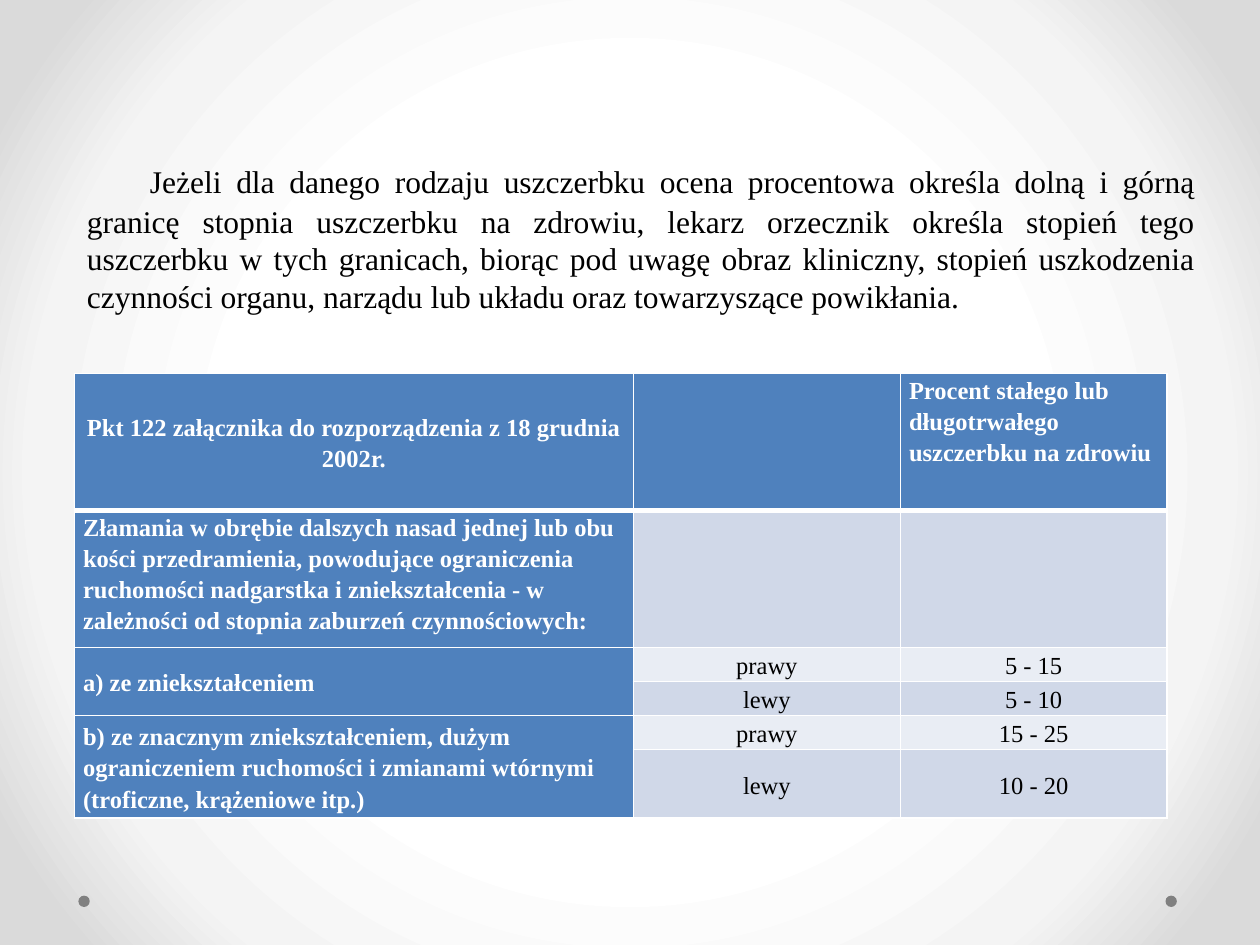
from pptx import Presentation
from pptx.dml.color import RGBColor
from pptx.enum.shapes import MSO_SHAPE as SHAPE
from pptx.enum.text import MSO_ANCHOR as ANCHOR, PP_ALIGN as ALIGN
from pptx.oxml import parse_xml
from pptx.oxml.ns import nsdecls
from pptx.util import Pt

FONT = "Times New Roman"
BLUE, BAND, PALE = "4F81BD", "D0D8E8", "E9EDF4"
WHITE, BLACK, GREY = "FFFFFF", "000000", "808080"

INTRO = (
    "Jeżeli dla danego rodzaju uszczerbku ocena procentowa określa dolną i górną "
    "granicę stopnia uszczerbku na zdrowiu, lekarz orzecznik określa stopień tego "
    "uszczerbku w tych granicach, biorąc pod uwagę obraz kliniczny, stopień "
    "uszkodzenia czynności organu, narządu lub układu oraz towarzyszące powikłania."
)
ROWS = [
    ("Pkt 122 załącznika do rozporządzenia z 18 grudnia 2002r.", "",
     "Procent stałego lub długotrwałego uszczerbku na zdrowiu"),
    ("Złamania w obrębie dalszych nasad jednej lub obu kości przedramienia, "
     "powodujące ograniczenia ruchomości nadgarstka i zniekształcenia - w "
     "zależności od stopnia zaburzeń czynnościowych:", "", ""),
    ("a) ze zniekształceniem", "prawy", "5 - 15"),
    ("", "lewy", "5 - 10"),
    ("b) ze znacznym zniekształceniem, dużym ograniczeniem ruchomości i zmianami "
     "wtórnymi (troficzne, krążeniowe itp.)", "prawy", "15 - 25"),
    ("", "lewy", "10 - 20"),
]
COL_WIDTHS = [319.5, 152.5, 152.5]
ROW_HEIGHTS = [78.3, 78.3, 19.5, 19.5, 19.5, 38.9]


def rgb(code):
    return RGBColor.from_string(code)


def style_font(font, size, color, bold=False):
    font.name, font.size, font.bold = FONT, Pt(size), bold
    font.color.rgb = rgb(color)


def set_background(s):
    s.background.fill.gradient()
    old = s.background._cSld.find(".//{*}gradFill")
    stops = "".join(
        f'<a:gs pos="{pos}000"><a:srgbClr val="{color}"/></a:gs>'
        for pos, color in [(50, WHITE), (76, "F4F4F4"), (92, "DADADA")]
    )
    new = parse_xml(
        f'<a:gradFill {nsdecls("a")} rotWithShape="1"><a:gsLst>{stops}</a:gsLst>'
        '<a:path path="circle"><a:fillToRect l="50000" t="50000" r="50000" '
        'b="50000"/></a:path></a:gradFill>'
    )
    old.getparent().replace(old, new)


def add_dot(s, x, y, size=6.5):
    sp = s.shapes.add_shape(SHAPE.OVAL, Pt(x), Pt(y), Pt(size), Pt(size))
    sp.shadow.inherit = False
    sp.fill.solid()
    sp.fill.fore_color.rgb = rgb(GREY)
    sp.line.fill.background()


def fill_body(sp):
    sp.left, sp.top, sp.width, sp.height = Pt(42.5), Pt(82.8), Pt(648), Pt(405)
    p = sp.text_frame.paragraphs[0]
    p.text = "\t"
    p.add_run().text = INTRO
    p.alignment, p.space_before = ALIGN.JUSTIFY, Pt(4.8)
    for r, size in zip(p.runs, (24, 18)):
        style_font(r.font, size, BLACK)
    pPr = p._p.get_or_add_pPr()
    pPr.set("marL", "0")
    pPr.set("indent", "0")
    pPr.append(parse_xml(f'<a:buNone {nsdecls("a")}/>'))


def set_borders(cell, row):
    widths = {"L": 1, "R": 1, "T": 3 if row == 1 else 1, "B": 3 if row == 0 else 1}
    tcPr = cell._tc.get_or_add_tcPr()
    for i, (side, width) in enumerate(widths.items()):
        tcPr.insert(i, parse_xml(
            f'<a:ln{side} {nsdecls("a")} w="{Pt(width)}"><a:solidFill>'
            f'<a:srgbClr val="{WHITE}"/></a:solidFill></a:ln{side}>'
        ))


def format_cell(cell, text, row, col):
    strong = row == 0 or col == 0
    cell.fill.solid()
    cell.fill.fore_color.rgb = rgb(BLUE if strong else BAND if row % 2 else PALE)
    set_borders(cell, row)
    if not text:
        return
    cell.margin_left = cell.margin_right = Pt(5)
    cell.margin_top = cell.margin_bottom = 0
    middle = row > 1 or (row, col) == (0, 0)
    cell.vertical_anchor = ANCHOR.MIDDLE if middle else ANCHOR.TOP
    p = cell.text_frame.paragraphs[0]
    p.text = text
    p.line_spacing = 1.15
    centred = not strong or (row, col) == (0, 0)
    p.alignment = ALIGN.CENTER if centred else ALIGN.LEFT
    style_font(p.runs[0].font, 14, WHITE if strong else BLACK, strong)


def add_percent_table(s):
    frame = s.shapes.add_table(
        len(ROWS), len(COL_WIDTHS), Pt(42.5), Pt(213.4),
        Pt(sum(COL_WIDTHS)), Pt(sum(ROW_HEIGHTS)),
    )
    table = frame.table
    for column, width in zip(table.columns, COL_WIDTHS):
        column.width = Pt(width)
    for row, height in zip(table.rows, ROW_HEIGHTS):
        row.height = Pt(height)
    for i, texts in enumerate(ROWS):
        for j, text in enumerate(texts):
            format_cell(table.cell(i, j), text, i, j)
    for i in (2, 4):
        table.cell(i, 0).merge(table.cell(i + 1, 0))


def main():
    prs = Presentation()
    prs.slide_width, prs.slide_height = Pt(720), Pt(540)
    s = prs.slides.add_slide(prs.slide_layouts[1])
    title = s.shapes.title
    title._element.getparent().remove(title._element)
    set_background(s)
    for x in (666, 44.8):
        add_dot(s, x, 511.8)
    fill_body(s.placeholders[1])
    add_percent_table(s)
    prs.save("out.pptx")


if __name__ == "__main__":
    main()
